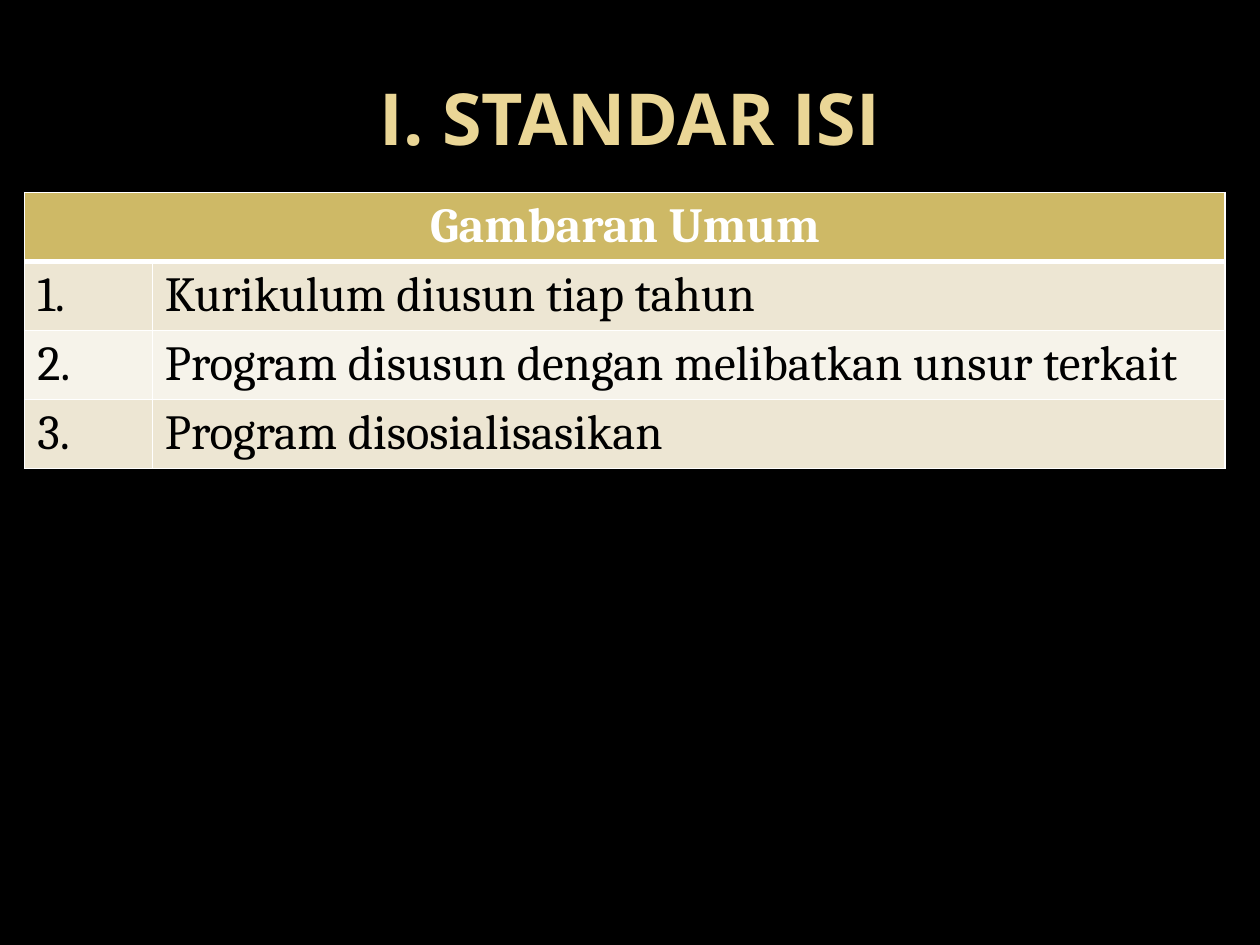
from lxml import etree
from pptx import Presentation
from pptx.dml.color import RGBColor
from pptx.enum import text
from pptx.oxml import ns
from pptx.util import Pt

COLORS = {
    "background": "000000",
    "title": "EAD696",
    "header": "CEB966",
    "odd": "EDE6D3",
    "even": "F6F3EA",
    "header_text": "FFFFFF",
    "body_text": "000000",
    "border": "FFFFFF",
}


def add_run(paragraph, wording, font_name, size, color, bold=False):
    run = paragraph.add_run()
    run.text = wording
    run.font.name = font_name
    run.font.size = Pt(size)
    run.font.bold = bold
    run.font.color.rgb = RGBColor.from_string(COLORS[color])


def format_cell(cell, fill, bottom=1):
    """Fill the cell and draw its borders; bottom is a width in points."""
    properties = cell._tc.get_or_add_tcPr()
    for side, width in (("lnL", 1), ("lnR", 1), ("lnT", 1), ("lnB", bottom)):
        line = etree.SubElement(properties, ns.qn(f"a:{side}"), w=str(Pt(width)))
        solid = etree.SubElement(line, ns.qn("a:solidFill"))
        etree.SubElement(solid, ns.qn("a:srgbClr"), val=COLORS["border"])
    cell.fill.solid()
    cell.fill.fore_color.rgb = RGBColor.from_string(COLORS[fill])


prs = Presentation()
prs.slide_width, prs.slide_height = Pt(720), Pt(540)
slide = prs.slides.add_slide(prs.slide_layouts[5])
slide.background.fill.solid()
slide.background.fill.fore_color.rgb = RGBColor.from_string(COLORS["background"])

title = slide.shapes.title
title.left, title.top, title.width, title.height = Pt(36), Pt(21.6), Pt(648), Pt(90)
title.text_frame.vertical_anchor = text.MSO_ANCHOR.MIDDLE
heading = title.text_frame.paragraphs[0]
heading.alignment = text.PP_ALIGN.CENTER
add_run(heading, "I. STANDAR ISI", "Open Sans", 41, "title", bold=True)

points = [
    "Kurikulum diusun tiap tahun",
    "Program disusun dengan melibatkan unsur terkait",
    "Program disosialisasikan",
]
overview = slide.shapes.add_table(
    len(points) + 1, 2, Pt(14.1), Pt(110), Pt(686), Pt(118)
).table
overview.columns[0].width = Pt(73)
overview.columns[1].width = Pt(613)

for cell in overview.rows[0].cells:
    format_cell(cell, "header", bottom=3)
header = overview.cell(0, 0)
header.merge(overview.cell(0, 1))
header.vertical_anchor = text.MSO_ANCHOR.MIDDLE
caption = header.text_frame.paragraphs[0]
caption.alignment = text.PP_ALIGN.CENTER
add_run(caption, "Gambaran Umum", "Cambria", 28, "header_text", bold=True)

for number, point in enumerate(points, start=1):
    for column, wording in enumerate((f"{number}.", point)):
        cell = overview.cell(number, column)
        format_cell(cell, "odd" if number % 2 else "even")
        add_run(cell.text_frame.paragraphs[0], wording, "Cambria", 28, "body_text")

prs.save("out.pptx")
